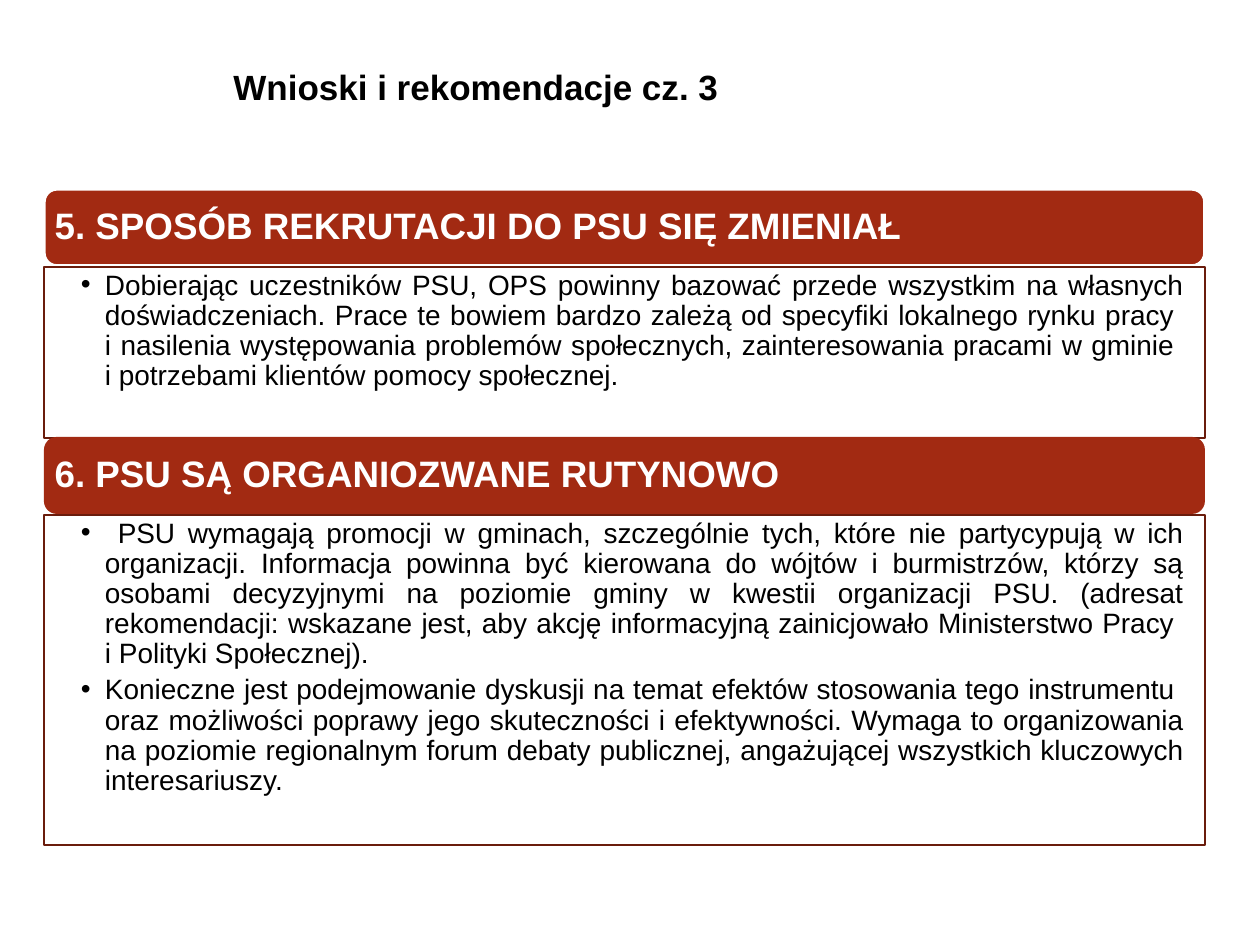
from lxml.etree import SubElement
from pptx import Presentation
from pptx.dml.color import RGBColor
from pptx.enum.shapes import MSO_SHAPE
from pptx.enum.text import MSO_ANCHOR, PP_ALIGN
from pptx.oxml.ns import qn
from pptx.util import Emu, Pt

EMU_PER_PX = 914400 / 126


def px(length):
    return Emu(round(length * EMU_PER_PX))


def color(value):
    return RGBColor.from_string(value)


class SlideBuilder:
    font_name = "Arial"
    header_fill = "A22A12"
    border = "6A1C0C"
    black = "000000"
    white = "FFFFFF"

    def __init__(self, slide):
        self.slide = slide

    def prepare_frame(self, shape, insets, anchor):
        frame = shape.text_frame
        frame.word_wrap = True
        frame.vertical_anchor = anchor
        left, top, right, bottom = map(px, insets)
        frame.margin_left, frame.margin_top = left, top
        frame.margin_right, frame.margin_bottom = right, bottom
        return frame

    def add_runs(self, paragraph, text, size, text_color, bold=False):
        for index, line in enumerate(text.split("\n")):
            if index:
                paragraph.add_line_break()
            run = paragraph.add_run()
            run.text = line
            run.font.name = self.font_name
            run.font.size = Pt(size)
            run.font.bold = bold
            run.font.color.rgb = color(text_color)

    def add_bullet(self, paragraph, indent):
        properties = paragraph._p.get_or_add_pPr()
        properties.set("marL", str(px(indent)))
        properties.set("indent", str(-px(indent)))
        SubElement(properties, qn("a:buFont"), typeface=self.font_name)
        SubElement(properties, qn("a:buChar"), char="•")

    def title(self, text, left, top, width, height):
        shape = self.slide.shapes.add_textbox(*map(px, (left, top, width, height)))
        frame = self.prepare_frame(shape, (13, 6, 13, 6), MSO_ANCHOR.MIDDLE)
        paragraph = frame.paragraphs[0]
        paragraph.alignment = PP_ALIGN.CENTER
        self.add_runs(paragraph, text, 20, self.black, bold=True)

    def header(self, text, left, top, width, height, outlined):
        shape = self.slide.shapes.add_shape(
            MSO_SHAPE.ROUNDED_RECTANGLE, *map(px, (left, top, width, height)))
        shape.shadow.inherit = False
        shape.fill.solid()
        shape.fill.fore_color.rgb = color(self.header_fill)
        if outlined:
            shape.line.color.rgb = color(self.white)
            shape.line.width = Pt(2)
        else:
            shape.line.fill.background()
        frame = self.prepare_frame(shape, (7, 7, 7, 7), MSO_ANCHOR.MIDDLE)
        paragraph = frame.paragraphs[0]
        paragraph.alignment = PP_ALIGN.LEFT
        paragraph.line_spacing = 0.9
        self.add_runs(paragraph, text, 21, self.white, bold=True)

    def body(self, items, left, top, width, height):
        shape = self.slide.shapes.add_shape(
            MSO_SHAPE.RECTANGLE, *map(px, (left, top, width, height)))
        shape.shadow.inherit = False
        shape.fill.background()
        shape.line.color.rgb = color(self.border)
        shape.line.width = Pt(0.75)
        frame = self.prepare_frame(shape, (37, 4, 21, 4), MSO_ANCHOR.TOP)
        for index, item in enumerate(items):
            paragraph = frame.add_paragraph() if index else frame.paragraphs[0]
            self.add_bullet(paragraph, 24)
            paragraph.alignment = PP_ALIGN.JUSTIFY
            paragraph.line_spacing = 0.9
            paragraph.space_after = Pt(3.2)
            self.add_runs(paragraph, item, 16, self.black)


# Section: heading, header top, body height, outlined header, bullets
SECTIONS = [
    ("5. SPOSÓB REKRUTACJI DO PSU SIĘ ZMIENIAŁ", 189, 171, True, [
        "Dobierając uczestników PSU, OPS powinny bazować przede wszystkim na "
        "własnych doświadczeniach. Prace te bowiem bardzo zależą od specyfiki "
        "lokalnego rynku pracy \ni nasilenia występowania problemów społecznych, "
        "zainteresowania pracami w gminie \ni potrzebami klientów pomocy społecznej.",
    ]),
    ("6. PSU SĄ ORGANIOZWANE RUTYNOWO", 437, 330, False, [
        " PSU wymagają promocji w gminach, szczególnie tych, które nie partycypują "
        "w ich organizacji. Informacja powinna być kierowana do wójtów i "
        "burmistrzów, którzy są osobami decyzyjnymi na poziomie gminy w kwestii "
        "organizacji PSU. (adresat rekomendacji: wskazane jest, aby akcję "
        "informacyjną zainicjowało Ministerstwo Pracy \ni Polityki Społecznej). ",
        "Konieczne jest podejmowanie dyskusji na temat efektów stosowania tego "
        "instrumentu \noraz możliwości poprawy jego skuteczności i efektywności. "
        "Wymaga to organizowania na poziomie regionalnym forum debaty publicznej, "
        "angażującej wszystkich kluczowych interesariuszy. ",
    ]),
]
LEFT, WIDTH, HEADER_HEIGHT, BODY_OFFSET = 44, 1161, 77, 78


def main():
    presentation = Presentation()
    presentation.slide_width, presentation.slide_height = px(1260), px(945)
    builder = SlideBuilder(presentation.slides.add_slide(presentation.slide_layouts[6]))

    # Sections: a header bar above a bordered box
    for heading, top, body_height, outlined, items in SECTIONS:
        builder.header(heading, LEFT, top, WIDTH, HEADER_HEIGHT, outlined)
        builder.body(items, LEFT, top + BODY_OFFSET, WIDTH, body_height)

    # Slide title
    builder.title("Wnioski i rekomendacje cz. 3", 94, 46, 764, 81)

    presentation.save("out.pptx")


if __name__ == "__main__":
    main()
